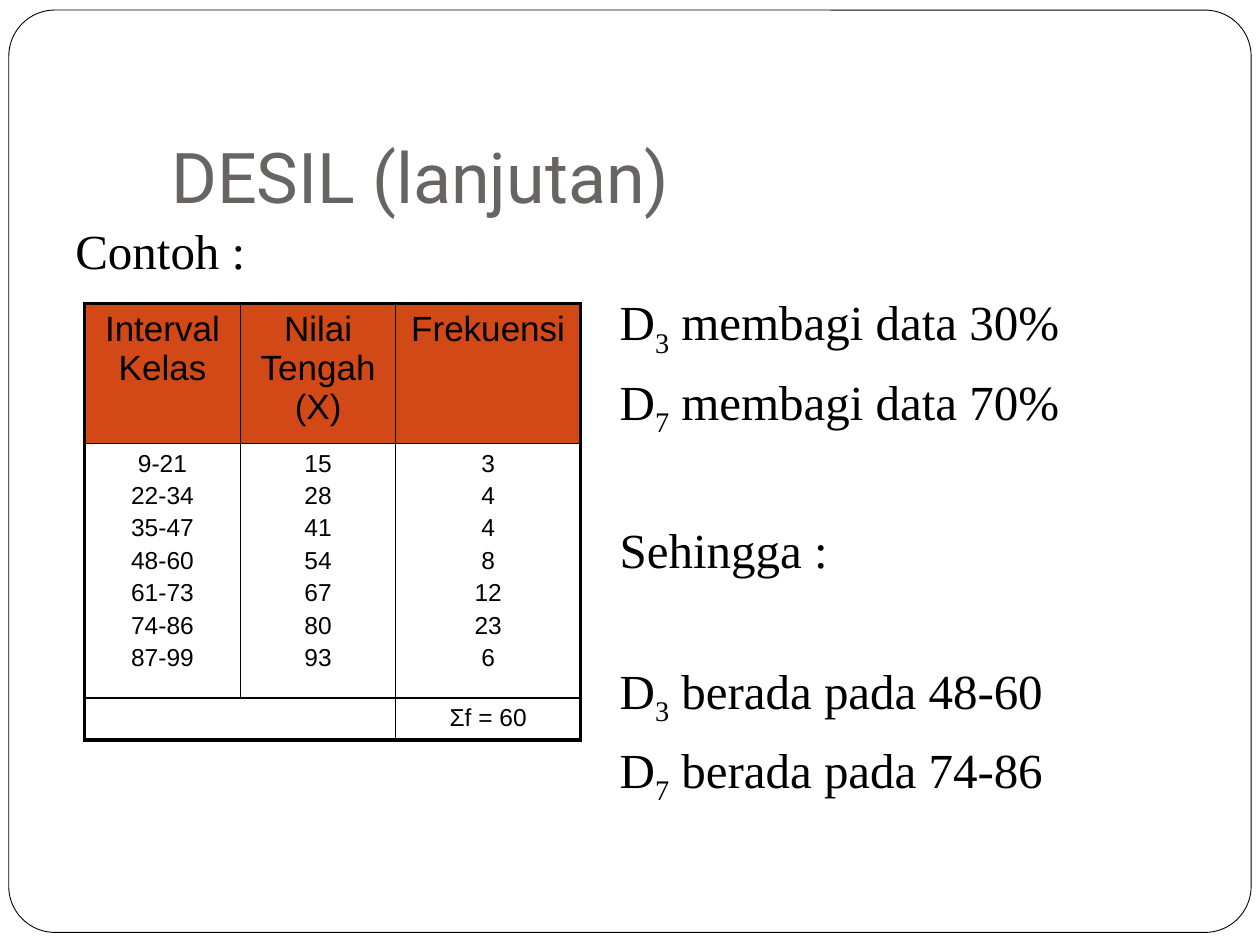
from pptx import Presentation
from pptx.dml.color import RGBColor
from pptx.enum.shapes import MSO_SHAPE
from pptx.enum.text import MSO_ANCHOR, PP_ALIGN
from pptx.oxml import parse_xml
from pptx.oxml.ns import nsdecls
from pptx.util import Inches, Pt

BLACK, WHITE, ORANGE, GREY = "000000", "FFFFFF", "D34817", "696464"
TITLE = "DESIL (lanjutan)"
# Body lines: runs (odd ones are subscripts), left indent, space before in points
INDENT, GAP, WIDE_GAP = 4.32, 7.2, 46.6
BODY = [
    (["Contoh :"], 0, GAP),
    (["D", "3", " membagi data 30%"], INDENT, GAP),
    (["D", "7", " membagi data 70%"], INDENT, GAP),
    (["Sehingga :"], INDENT, WIDE_GAP),
    (["D", "3", " berada pada 48-60"], INDENT, WIDE_GAP),
    (["D", "7", " berada pada 74-86"], INDENT, GAP),
]
HEADERS = ["Interval Kelas", "Nilai Tengah (X)", "Frekuensi"]
CLASSES = [("9-21", 15, 3), ("22-34", 28, 4), ("35-47", 41, 4), ("48-60", 54, 8),
           ("61-73", 67, 12), ("74-86", 80, 23), ("87-99", 93, 6)]
TOTAL = "Σf = 60"
COLS, ROWS = [1.24, 1.23, 1.47], [1.11, 2.02, 0.33]


def rgb(color):
    return RGBColor.from_string(color)


def set_font(font, name, size, color=BLACK):
    font.name, font.size, font.color.rgb = name, Pt(size), rgb(color)


def add_text(s, x, y, w, h, anchor):
    tf = s.shapes.add_textbox(*map(Inches, (x, y, w, h))).text_frame
    tf.word_wrap, tf.vertical_anchor = True, anchor
    return tf


def fill_cell(cell, lines, size, fill=None):
    for i, line in enumerate(lines):
        p = cell.text_frame.paragraphs[0] if i == 0 else cell.text_frame.add_paragraph()
        p.text, p.alignment = str(line), PP_ALIGN.CENTER
        p.space_before = Pt(size * 0.2)
        set_font(p.font, "Arial", size)
    if fill:
        cell.fill.solid()
        cell.fill.fore_color.rgb = rgb(fill)
    else:
        cell.fill.background()


def set_borders(cell, widths):
    pr = cell._tc.get_or_add_tcPr()
    for i, (side, width) in enumerate(widths.items()):
        pr.insert(i, parse_xml(
            f'<a:ln{side} {nsdecls("a")} w="{Pt(width)}"><a:solidFill>'
            f'<a:srgbClr val="{BLACK}"/></a:solidFill></a:ln{side}>'))


prs = Presentation()
prs.slide_width, prs.slide_height = Inches(10), Inches(7.5)
s = prs.slides.add_slide(prs.slide_layouts[6])

# Rounded frame
frame = s.shapes.add_shape(MSO_SHAPE.ROUNDED_RECTANGLE,
                           *map(Inches, (0.07, 0.08, 9.86, 7.32)))
frame.adjustments[0] = 0.05
frame.shadow.inherit = False
frame.fill.solid()
frame.fill.fore_color.rgb = rgb(WHITE)
frame.line.color.rgb, frame.line.width = rgb(BLACK), Pt(0.5)

# Title
tf = add_text(s, 1.26, 0.23, 8.52, 1.6, MSO_ANCHOR.BOTTOM)
tf.margin_bottom = Inches(0.1)
tf.text = TITLE
set_font(tf.paragraphs[0].font, "Roboto", 40, GREY)

# Body text
tf = add_text(s, 0.5, 1.7, 8.99, 4.95, MSO_ANCHOR.TOP)
for i, (runs, indent, gap) in enumerate(BODY):
    p = tf.paragraphs[0] if i == 0 else tf.add_paragraph()
    p.space_before = Pt(gap)
    p._p.get_or_add_pPr().set("marL", str(Inches(indent)))
    set_font(p.font, "Times New Roman", 28)
    for j, text in enumerate(runs):
        r = p.add_run()
        r.text = text
        if j % 2:
            r.font._element.set("baseline", "-25000")

# Frequency table
table = s.shapes.add_table(len(ROWS), len(COLS), Inches(0.67), Inches(2.41),
                           Inches(sum(COLS)), Inches(sum(ROWS))).table
for col, width in zip(table.columns, COLS):
    col.width = Inches(width)
for row, height in zip(table.rows, ROWS):
    row.height = Inches(height)
for c, (header, values) in enumerate(zip(HEADERS, zip(*CLASSES))):
    fill_cell(table.cell(0, c), [header], 20, ORANGE)
    fill_cell(table.cell(1, c), values, 14)
    fill_cell(table.cell(2, c), [TOTAL] if c == 2 else [""], 14)
table.cell(2, 0).merge(table.cell(2, 1))

# Thick outer border, thin inner grid
last_row, last_col = len(ROWS) - 1, len(COLS) - 1
for r in range(len(ROWS)):
    for c in range(len(COLS)):
        edges = {"L": c == 0, "R": c == last_col, "T": r == 0, "B": r == last_row}
        set_borders(table.cell(r, c),
                    {side: 2.25 if outer else 1 for side, outer in edges.items()})

prs.save("out.pptx")
